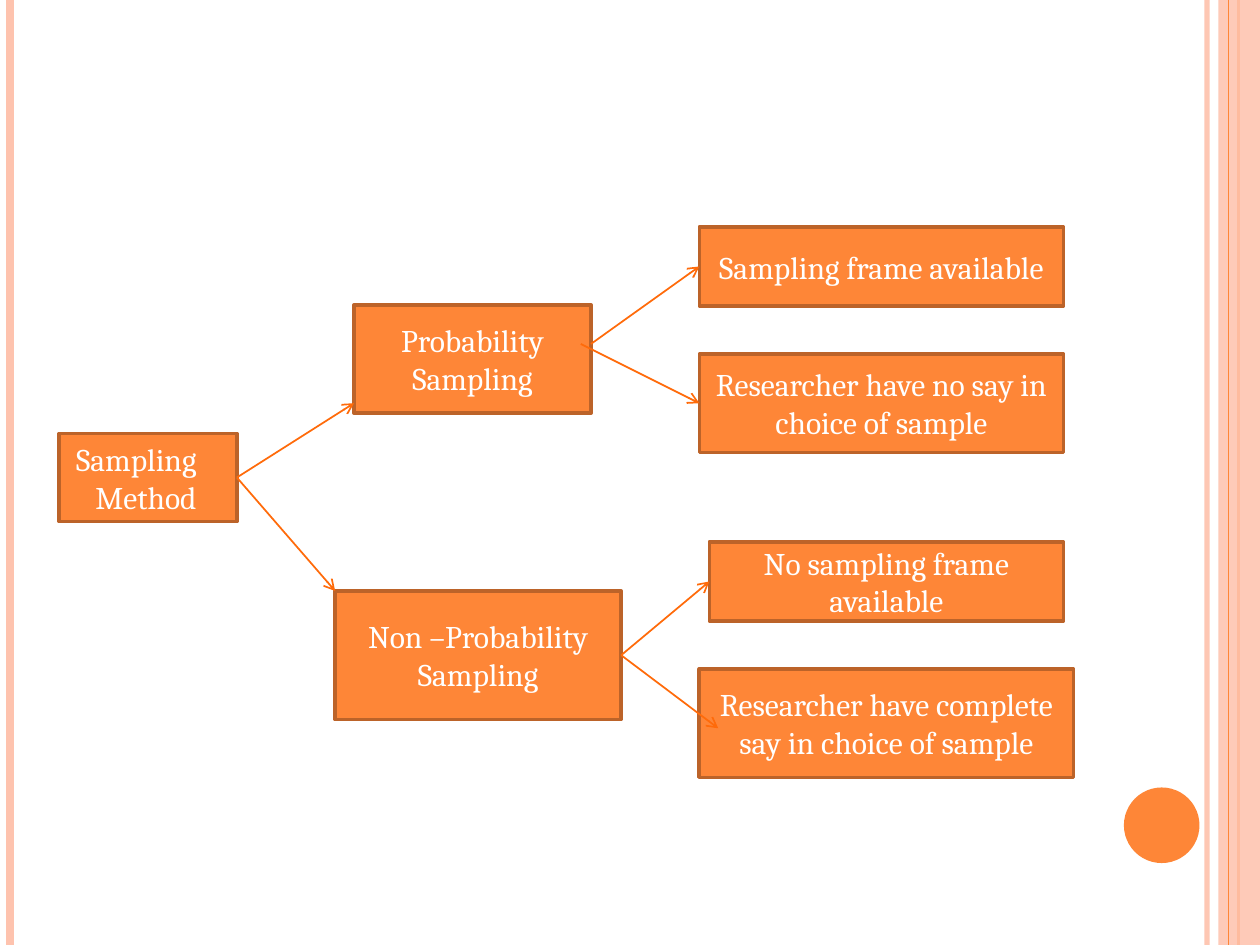
from lxml import etree
from pptx import Presentation
from pptx.dml.color import RGBColor
from pptx.enum.shapes import MSO_CONNECTOR, MSO_SHAPE
from pptx.enum.text import MSO_ANCHOR, PP_ALIGN
from pptx.oxml.ns import qn
from pptx.util import Inches, Pt

RECT, PROCESS, OVAL = MSO_SHAPE.RECTANGLE, MSO_SHAPE.FLOWCHART_PROCESS, MSO_SHAPE.OVAL
STRAIGHT = MSO_CONNECTOR.STRAIGHT
CENTER, RIGHT, MIDDLE = PP_ALIGN.CENTER, PP_ALIGN.RIGHT, MSO_ANCHOR.MIDDLE
LEFT_SIDE, RIGHT_SIDE = 1, 3

COLORS = {"orange": "FE8637", "pale": "FEC3AE", "border": "BC6329",
          "arrow": "FF6B0A", "text": "FFFFFF"}
FONT = {"name": "Cambria", "size": Pt(18)}
FRAME = {"word_wrap": True, "vertical_anchor": MIDDLE}

prs = Presentation()
prs.slide_width, prs.slide_height = Inches(10), Inches(7.5)
s = prs.slides.add_slide(prs.slide_layouts[6])


def add_line(x1, y1, x2, y2, color, width):
    c = s.shapes.add_connector(STRAIGHT, Inches(x1), Inches(y1), Inches(x2), Inches(y2))
    c.line.color.rgb = RGBColor.from_string(COLORS[color])
    c.line.width = Pt(width)
    etree.SubElement(c._element.spPr, qn("a:effectLst"))
    return c


def add_box(kind, x, y, w, h, color, alpha=100):
    sp = s.shapes.add_shape(kind, Inches(x), Inches(y), Inches(w), Inches(h))
    sp.shadow.inherit = False
    sp.fill.solid()
    sp.fill.fore_color.rgb = RGBColor.from_string(COLORS[color])
    sp.line.fill.background()
    if alpha < 100:
        clr = sp._element.spPr.find(".//" + qn("a:srgbClr"))
        etree.SubElement(clr, qn("a:alpha"), val=str(alpha * 1000))
    return sp


edge = add_line(9.58, 0, 9.58, 7.5, "pale", 3)
clr = edge._element.spPr.find(".//" + qn("a:srgbClr"))
etree.SubElement(clr, qn("a:alpha"), val="93000")
add_line(0.08, 0, 0.08, 7.5, "pale", 4.5)
add_line(9.83, 0, 9.83, 7.5, "orange", 1.5)
add_box(RECT, 9.67, 0, 0.33, 7.5, "pale", 87)
add_line(9.75, 0, 9.75, 7.5, "orange", 0.75)
add_box(OVAL, 8.92, 6.25, 0.6, 0.6, "orange")

nodes = {
    "method": (PROCESS, 0.47, 3.44, 1.41, 0.7, "Sampling Method"),
    "probability": (PROCESS, 2.81, 2.42, 1.88, 0.86, "Probability Sampling"),
    "non_probability": (PROCESS, 2.66, 4.69, 2.27, 1.02, "Non –Probability Sampling"),
    "frame": (RECT, 5.55, 1.8, 2.89, 0.63, "Sampling frame available"),
    "no_say": (RECT, 5.55, 2.81, 2.89, 0.78, "Researcher have no say in choice of sample"),
    "no_frame": (RECT, 5.63, 4.3, 2.81, 0.63, "No sampling frame available"),
    "full_say": (RECT, 5.55, 5.31, 2.97, 0.86, "Researcher have complete say in choice of sample"),
}
boxes = {}
for name, (kind, x, y, w, h, text) in nodes.items():
    sp = boxes[name] = add_box(kind, x, y, w, h, "orange")
    sp.line.color.rgb = RGBColor.from_string(COLORS["border"])
    sp.line.width = Pt(2)
    tf = sp.text_frame
    for key, value in FRAME.items():
        setattr(tf, key, value)
    p = tf.paragraphs[0]
    p.alignment = CENTER
    r = p.add_run()
    r.text = text
    for key, value in FONT.items():
        setattr(r.font, key, value)
    r.font.color.rgb = RGBColor.from_string(COLORS["text"])

tf = boxes["method"].text_frame
tf.margin_left, tf.margin_right = Inches(0.05), Inches(0.32)
tf.paragraphs[0].alignment = RIGHT

arrows = [
    (1.88, 3.79, 2.66, 4.69, "method", None),
    (1.88, 3.79, 2.81, 3.2, "method", None),
    (4.69, 2.73, 5.55, 2.11, None, "frame"),
    (4.61, 2.73, 5.55, 3.2, None, "no_say"),
    (4.93, 5.2, 5.63, 4.61, "non_probability", "no_frame"),
    (4.93, 5.2, 5.7, 5.78, "non_probability", None),
]
for x1, y1, x2, y2, start, end in arrows:
    c = add_line(x1, y1, x2, y2, "arrow", 1)
    etree.SubElement(c.line._get_or_add_ln(), qn("a:tailEnd"), type="arrow")
    if start:
        c.begin_connect(boxes[start], RIGHT_SIDE)
    if end:
        c.end_connect(boxes[end], LEFT_SIDE)

prs.save("out.pptx")
